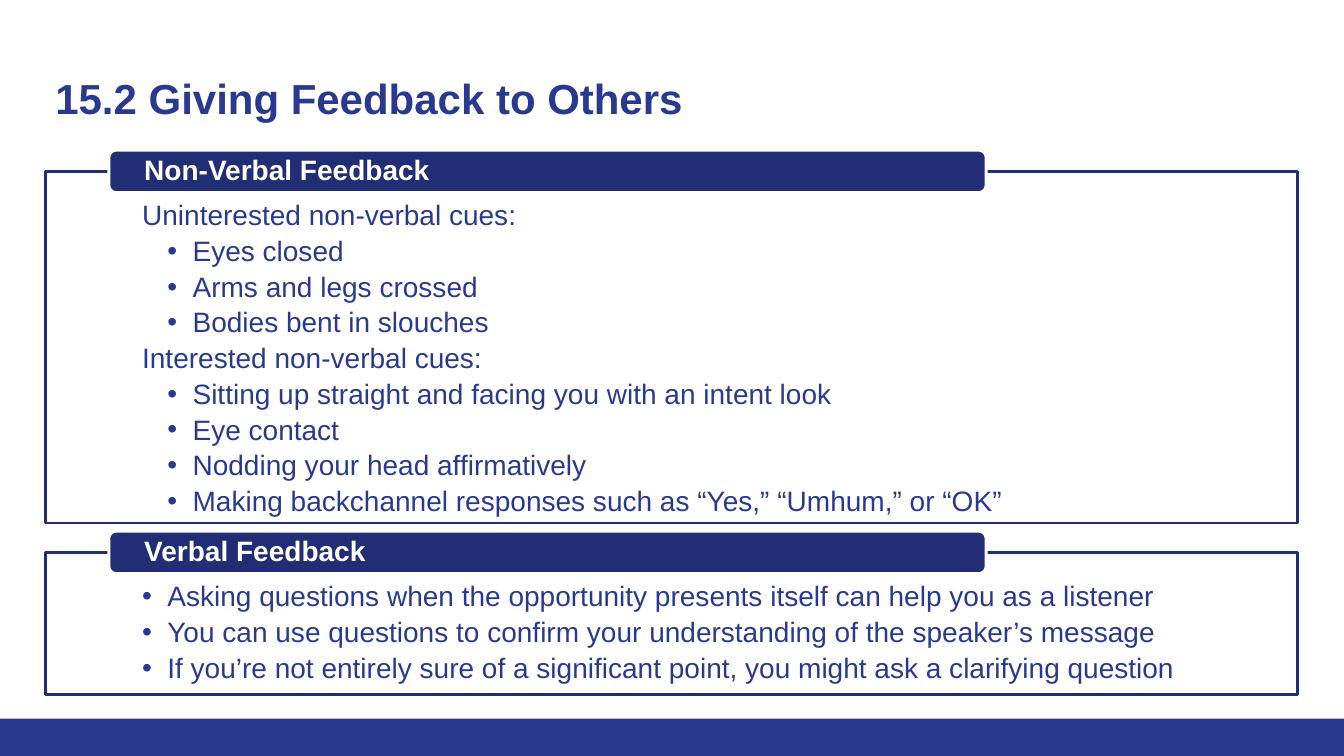
from lxml.etree import SubElement
from pptx import Presentation
from pptx.dml.color import RGBColor
from pptx.enum.shapes import MSO_SHAPE
from pptx.enum.text import MSO_ANCHOR, PP_ALIGN
from pptx.oxml.ns import qn
from pptx.util import Inches, Pt

WIDE, HIGH = Inches(13.33), Inches(7.5)
BLUE = RGBColor(0x2A, 0x39, 0x90)
NAVY = RGBColor(0x21, 0x2D, 0x74)
WHITE = RGBColor(0xFF, 0xFF, 0xFF)
FONT = "Arial"
STEP = Inches(0.25)
EDGE, SPAN = 3.38, 93.17

PANELS = [
    ("Non-Verbal Feedback", 22.67, 46.53, [
        (0, "Uninterested non-verbal cues:"),
        (2, "Eyes closed"),
        (2, "Arms and legs crossed"),
        (2, "Bodies bent in slouches"),
        (0, "Interested non-verbal cues:"),
        (2, "Sitting up straight and facing you with an intent look"),
        (2, "Eye contact"),
        (2, "Nodding your head affirmatively"),
        (2, "Making backchannel responses such as “Yes,” “Umhum,” or “OK”"),
    ]),
    ("Verbal Feedback", 73.07, 18.8, [
        (1, "Asking questions when the opportunity presents itself can help you as a listener"),
        (1, "You can use questions to confirm your understanding of the speaker’s message"),
        (1, "If you’re not entirely sure of a significant point, you might ask a clarifying question"),
    ]),
]


def place(left, top, width, height):
    return (round(WIDE * left / 100), round(HIGH * top / 100),
            round(WIDE * width / 100), round(HIGH * height / 100))


def add_box(slide, kind, area, fill, line=None):
    box = slide.shapes.add_shape(kind, *place(*area))
    box.shadow.inherit = False
    box.fill.solid()
    box.fill.fore_color.rgb = fill
    if line is None:
        box.line.fill.background()
    else:
        box.line.color.rgb = line
        box.line.width = Pt(2)
    return box


def set_frame(shape, side, top, base, anchor):
    frame = shape.text_frame
    frame.word_wrap = True
    frame.margin_left = frame.margin_right = Inches(side)
    frame.margin_top, frame.margin_bottom = Inches(top), Inches(base)
    frame.vertical_anchor = anchor
    return frame


def style(para, size, color, bold=False):
    para.alignment = PP_ALIGN.LEFT
    for run in para.runs:
        run.font.name = FONT
        run.font.size = Pt(size)
        run.font.bold = bold
        run.font.color.rgb = color


def add_bullet(para, level):
    props = para._p.get_or_add_pPr()
    props.set("marL", str(STEP * level))
    props.set("indent", str(-STEP))
    SubElement(props, qn("a:buFont"), typeface=FONT)
    SubElement(props, qn("a:buChar"), char="•")


def add_title(slide, text):
    box = slide.shapes.add_textbox(*place(EDGE, 8, SPAN, 11.87))
    frame = set_frame(box, 0.1, 0.12, 0.1, MSO_ANCHOR.TOP)
    frame.text = text
    style(frame.paragraphs[0], 30, BLUE, True)


def add_panel(slide, top, height, items):
    box = add_box(slide, MSO_SHAPE.RECTANGLE, (EDGE, top, SPAN, height), WHITE, NAVY)
    frame = set_frame(box, 0.96, 0.3, 0.16, MSO_ANCHOR.TOP)
    frame.text = "\n".join(text for level, text in items)
    for para, (level, text) in zip(frame.paragraphs, items):
        para.line_spacing = 0.9
        para.space_after = Pt(3.9)
        if level:
            add_bullet(para, level)
        style(para, 20, BLUE)


def add_tab(slide, text, top):
    area = (8.1, top - 2.8, 65.27, 5.6)
    tab = add_box(slide, MSO_SHAPE.ROUNDED_RECTANGLE, area, NAVY, WHITE)
    frame = set_frame(tab, 0.33, 0, 0, MSO_ANCHOR.MIDDLE)
    frame.text = text
    frame.paragraphs[0].line_spacing = 0.9
    style(frame.paragraphs[0], 20, WHITE, True)


def main():
    deck = Presentation()
    deck.slide_width, deck.slide_height = WIDE, HIGH
    slide = deck.slides.add_slide(deck.slide_layouts[6])
    add_box(slide, MSO_SHAPE.RECTANGLE, (0, 95.07, 100, 4.93), BLUE)
    add_title(slide, "15.2 Giving Feedback to Others")
    for head, top, height, items in PANELS:
        add_panel(slide, top, height, items)
        add_tab(slide, head, top)
    deck.save("out.pptx")


if __name__ == "__main__":
    main()
